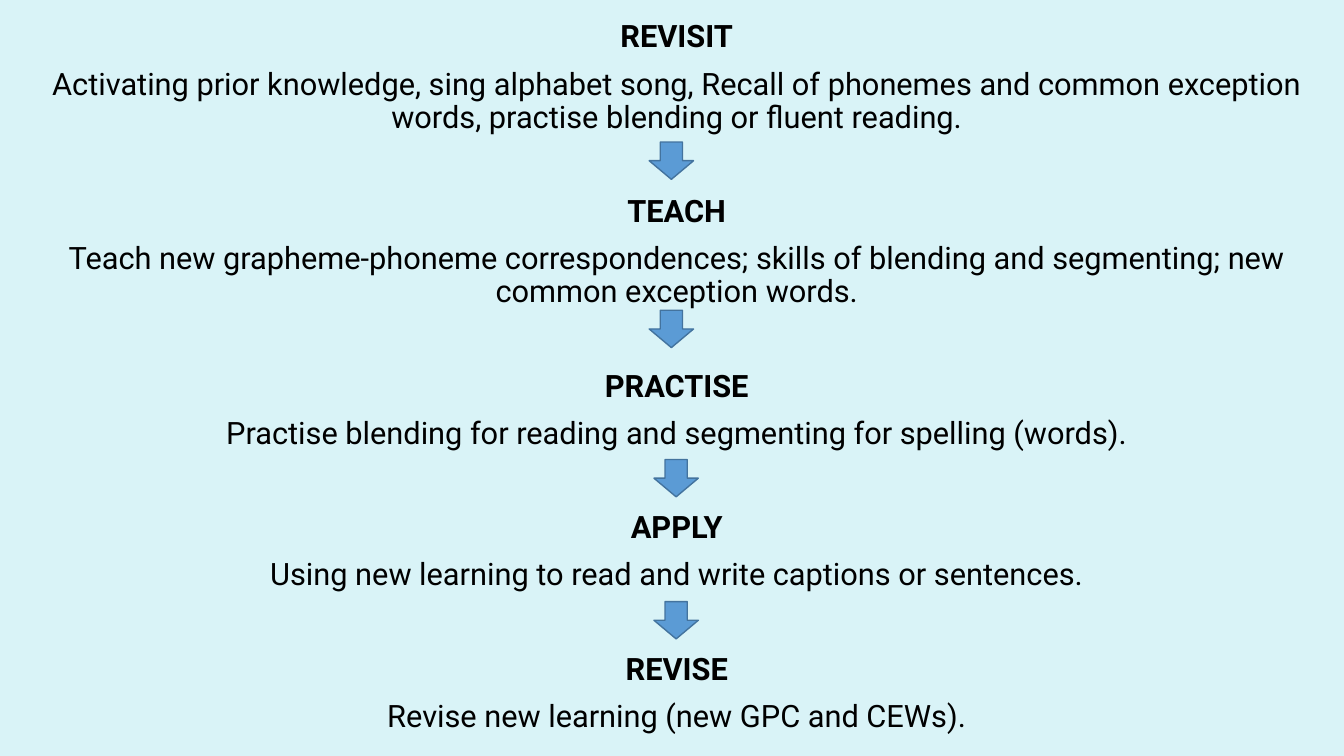
import pptx
import pptx.util
import pptx.dml.color
import pptx.enum.shapes
import pptx.enum.text

Cm = pptx.util.Cm
Pt = pptx.util.Pt
RGBColor = pptx.dml.color.RGBColor

BACKGROUND = RGBColor(0xD9, 0xF3, 0xF7)
TEXT = RGBColor(0x00, 0x00, 0x00)
ARROW_FILL = RGBColor(0x5B, 0x9B, 0xD5)
ARROW_LINE = RGBColor(0x43, 0x73, 0x9E)

STAGES = [
    ("REVISIT", "Activating prior knowledge, sing alphabet song, Recall of phonemes "
                "and common exception words, practise blending or fluent reading."),
    ("TEACH", "Teach new grapheme-phoneme correspondences; skills of blending and "
              "segmenting; new common exception words."),
    ("PRACTISE", "Practise blending for reading and segmenting for spelling (words)."),
    ("APPLY", "Using new learning to read and write captions or sentences."),
    ("REVISE", "Revise new learning (new GPC and CEWs)."),
]
ARROWS = [(16.36, 3.58), (16.36, 7.82), (16.48, 11.58), (16.48, 15.16)]

prs = pptx.Presentation()
prs.slide_width = Cm(33.87)
prs.slide_height = Cm(19.05)
s = prs.slides.add_slide(prs.slide_layouts[6])
s.background.fill.solid()
s.background.fill.fore_color.rgb = BACKGROUND

# Stage headings with their descriptions
tf = s.shapes.add_textbox(Cm(0.61), Cm(0.41), Cm(32.89), Cm(17.86)).text_frame
tf.word_wrap = True
for i, stage in enumerate(STAGES):
    for j, line in enumerate(stage):
        is_heading = j == 0
        is_first = is_heading and i == 0
        p = tf.paragraphs[0] if is_first else tf.add_paragraph()
        p.text = line
        p.alignment = pptx.enum.text.PP_ALIGN.CENTER
        p.line_spacing = 0.9
        if is_first:
            p.space_before = Pt(0)
        else:
            p.space_before = Pt(43.5 if is_heading else 10)
        r = p.runs[0]
        r.font.name = "Roboto"
        r.font.size = Pt(22)
        r.font.bold = is_heading
        r.font.color.rgb = TEXT

# Arrows between the stages
for left, top in ARROWS:
    sp = s.shapes.add_shape(pptx.enum.shapes.MSO_SHAPE.DOWN_ARROW,
                            Cm(left), Cm(top), Cm(1.12), Cm(0.94))
    sp.shadow.inherit = False
    sp.fill.solid()
    sp.fill.fore_color.rgb = ARROW_FILL
    sp.line.color.rgb = ARROW_LINE
    sp.line.width = Pt(1)

prs.save("out.pptx")
